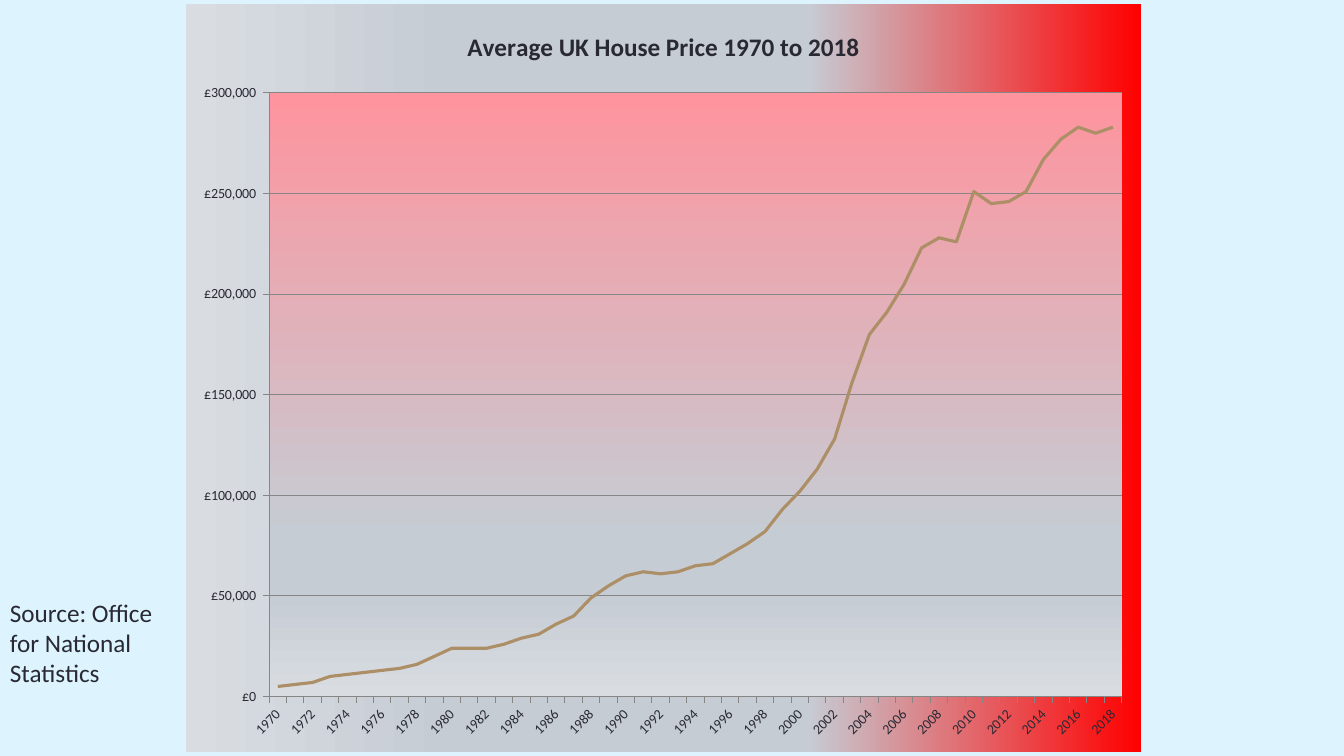
import lxml.etree
import pptx
import pptx.chart.data
import pptx.dml.color
import pptx.enum.chart
import pptx.enum.text
import pptx.oxml
import pptx.oxml.ns
import pptx.util

EMU_PER_PX = 914400 / 100.8
FONT = "Calibri"
SKY = pptx.dml.color.RGBColor(0xDD, 0xF4, 0xFF)
INK = pptx.dml.color.RGBColor(0x29, 0x29, 0x34)
BRONZE = pptx.dml.color.RGBColor(0xAD, 0x8F, 0x67)
GREY = pptx.dml.color.RGBColor(0x86, 0x86, 0x86)
RED = pptx.dml.color.RGBColor(0xFF, 0x00, 0x00)
PINK = pptx.dml.color.RGBColor(0xFE, 0x94, 0x9E)
STEEL = pptx.dml.color.RGBColor(0xC6, 0xCC, 0xD4)
MIST = pptx.dml.color.RGBColor(0xD9, 0xDD, 0xE2)

FIRST_YEAR = 1970
PRICES_IN_THOUSANDS = [
    5, 6, 7, 10, 11, 12, 13, 14, 16, 20,
    24, 24, 24, 26, 29, 31, 36, 40, 49, 55,
    60, 62, 61, 62, 65, 66, 71, 76, 82, 93,
    102, 113, 128, 156, 180, 191, 205, 223, 228, 226,
    251, 245, 246, 251, 267, 277, 283, 280, 283,
]
POUNDS = '"£"#,##0_);[Red]\\("£"#,##0\\)'


def px(length):
    return pptx.util.Emu(round(length * EMU_PER_PX))


def style_font(font, size, bold=False):
    font.name = FONT
    font.size = pptx.util.Pt(size)
    font.bold = bold
    font.color.rgb = INK


def gradient_properties(stops, angle):
    """Return a borderless c:spPr with a linear gradient of (percent, colour) stops."""
    stop_xml = "".join(
        f'<a:gs pos="{percent * 1000}"><a:srgbClr val="{colour}"/></a:gs>'
        for percent, colour in stops
    )
    return pptx.oxml.parse_xml(
        f'<c:spPr {pptx.oxml.ns.nsdecls("c", "a")}><a:gradFill><a:gsLst>{stop_xml}</a:gsLst>'
        f'<a:lin ang="{angle * 60000}" scaled="0"/></a:gradFill>'
        "<a:ln><a:noFill/></a:ln></c:spPr>"
    )


def place_plot(plot_area, x, y, w, h):
    """Fix the inner plot area, in fractions of the chart."""
    for layout in plot_area.xpath("c:layout"):
        plot_area.remove(layout)
    fractions = "".join(
        f'<c:{key} val="{value}"/>' for key, value in zip("xywh", (x, y, w, h))
    )
    plot_area.insert(0, pptx.oxml.parse_xml(
        f'<c:layout {pptx.oxml.ns.nsdecls("c")}><c:manualLayout>'
        '<c:layoutTarget val="inner"/><c:xMode val="edge"/><c:yMode val="edge"/>'
        f"{fractions}</c:manualLayout></c:layout>"
    ))


def style_axis(axis):
    axis.major_tick_mark = pptx.enum.chart.XL_TICK_MARK.OUTSIDE
    axis.minor_tick_mark = pptx.enum.chart.XL_TICK_MARK.NONE
    axis.format.line.color.rgb = GREY
    axis.format.line.width = pptx.util.Pt(0.75)
    style_font(axis.tick_labels.font, 10)


def slant_year_labels(chart_space):
    """Turn the year labels by 45 degrees and show every second one."""
    year_axis = chart_space.xpath(".//c:catAx")[0]
    year_axis.xpath("c:txPr/a:bodyPr")[0].set("rot", str(-45 * 60000))
    skip = lxml.etree.Element(pptx.oxml.ns.qn("c:tickLblSkip"), val="2")
    year_axis.xpath("c:noMultiLvlLbl")[0].addprevious(skip)


def add_price_chart(slide, left, top, width, height):
    data = pptx.chart.data.CategoryChartData(number_format=POUNDS)
    data.categories = [str(FIRST_YEAR + i) for i in range(len(PRICES_IN_THOUSANDS))]
    data.add_series("Series 1", [price * 1000 for price in PRICES_IN_THOUSANDS])
    chart = slide.shapes.add_chart(
        pptx.enum.chart.XL_CHART_TYPE.LINE,
        px(left), px(top), px(width), px(height), data,
    ).chart
    style_font(chart.font, 10)
    chart.has_legend = False

    heading = chart.chart_title.text_frame
    heading.text = "Average UK House Price 1970 to 2018"
    style_font(heading.paragraphs[0].runs[0].font, 18, bold=True)
    chart.chart_title.include_in_layout = False

    years, prices = chart.category_axis, chart.value_axis
    style_axis(years)
    style_axis(prices)
    prices.minimum_scale = 0
    prices.maximum_scale = 300000
    prices.major_unit = 50000
    prices.tick_labels.number_format = POUNDS
    prices.tick_labels.number_format_is_linked = False
    prices.has_major_gridlines = True
    prices.major_gridlines.format.line.color.rgb = GREY
    prices.major_gridlines.format.line.width = pptx.util.Pt(0.75)

    chart.plots[0].vary_by_categories = False
    price_line = chart.plots[0].series[0]
    price_line.smooth = False
    price_line.marker.style = pptx.enum.chart.XL_MARKER_STYLE.NONE
    price_line.format.line.color.rgb = BRONZE
    price_line.format.line.width = pptx.util.Pt(2.25)

    chart_space = chart.element if hasattr(chart, "element") else chart._chartSpace
    slant_year_labels(chart_space)
    plot_area = chart_space.xpath("c:chart/c:plotArea")[0]
    place_plot(plot_area, 0.087, 0.119, 0.893, 0.807)
    plot_area.append(gradient_properties(
        [(0, PINK), (74, STEEL), (83, STEEL), (100, MIST)], 90))
    chart_space.xpath("c:chart")[0].addnext(gradient_properties(
        [(0, RED), (35, STEEL), (72, STEEL), (100, MIST)], 180))


def add_source_note(slide, left, top, width, height):
    note = slide.shapes.add_textbox(px(left), px(top), px(width), px(height)).text_frame
    note.word_wrap = True
    note.auto_size = pptx.enum.text.MSO_AUTO_SIZE.SHAPE_TO_FIT_TEXT
    note.text = "Source: Office for National Statistics"
    style_font(note.paragraphs[0].runs[0].font, 18)


def main():
    deck = pptx.Presentation()
    deck.slide_width, deck.slide_height = px(1344), px(756)
    slide = deck.slides.add_slide(deck.slide_layouts[6])
    slide.background.fill.solid()
    slide.background.fill.fore_color.rgb = SKY
    add_source_note(slide, 0, 592, 186, 102)
    add_price_chart(slide, 186, 4, 955, 748)
    deck.save("out.pptx")


if __name__ == "__main__":
    main()
